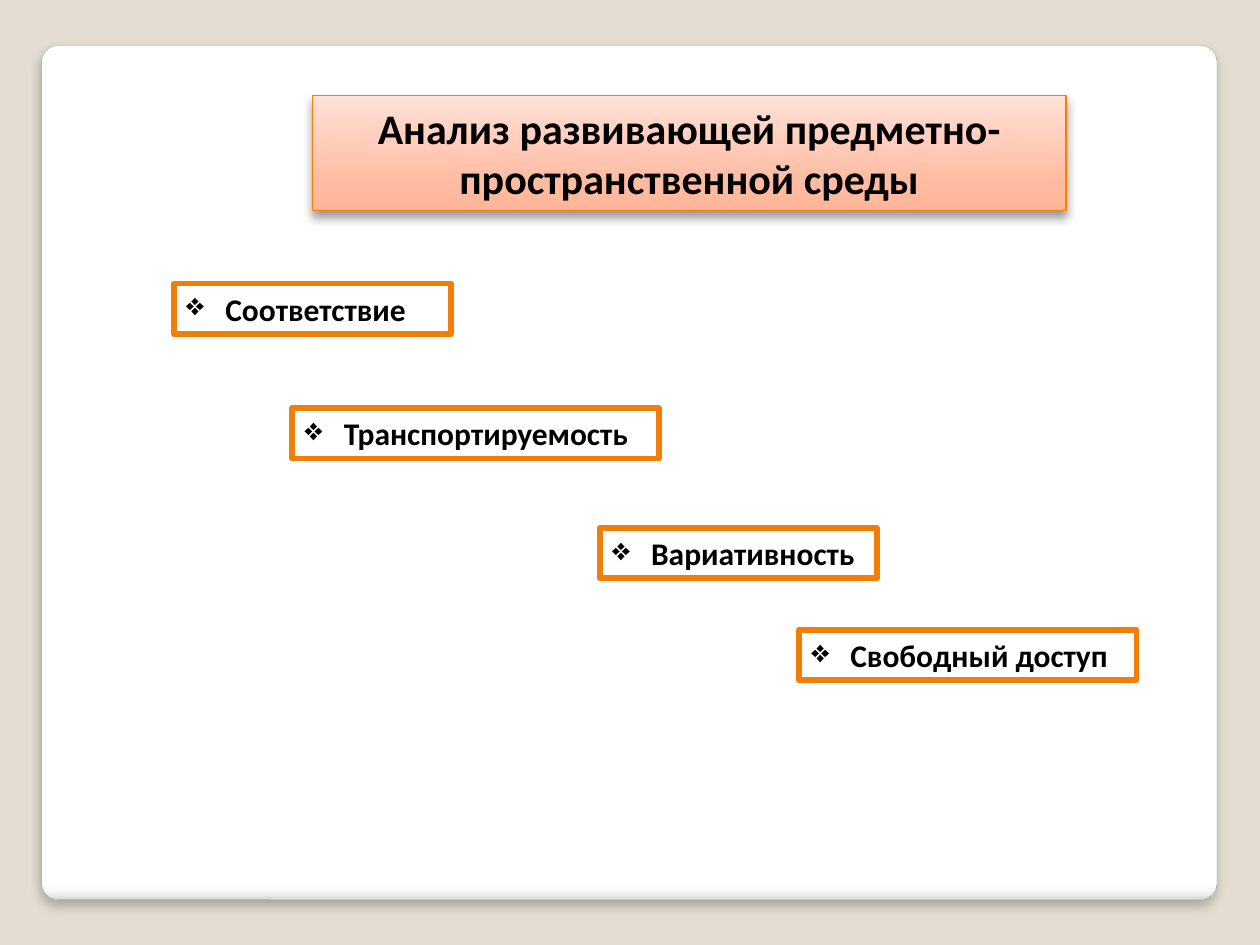
import pptx
import pptx.dml.color
import pptx.enum.dml
import pptx.enum.shapes
import pptx.enum.text
import pptx.oxml
import pptx.oxml.ns
import pptx.util
from pptx.util import Inches

NAMESPACE = pptx.oxml.ns.nsdecls("a")
RECTANGLE = pptx.enum.shapes.MSO_SHAPE.RECTANGLE
ROUNDED = pptx.enum.shapes.MSO_SHAPE.ROUNDED_RECTANGLE
ORANGE = "F07F09"
LABEL_HEIGHT = 0.4
LABELS = [
    ("Соответствие", 1.38, 2.25, 2.2),
    ("Транспортируемость", 2.32, 3.24, 2.91),
    ("Вариативность", 4.76, 4.19, 2.2),
    ("Свободный доступ", 6.34, 5, 2.68),
]


def color(hex_string):
    """Return the colour for a hex string."""
    return pptx.dml.color.RGBColor.from_string(hex_string)


def set_line(shape, hex_string, width):
    """Outline a shape with a solid line of the given width in points."""
    shape.line.color.rgb = color(hex_string)
    shape.line.width = pptx.util.Pt(width)


def set_gradient(shape, stops, angle):
    """Fill a shape with gradient stops at a counter-clockwise angle."""
    shape.fill.gradient()
    shape.fill.gradient_angle = angle
    stop_list = shape.element.spPr.find(".//" + pptx.oxml.ns.qn("a:gsLst"))
    for stop in list(stop_list):
        stop_list.remove(stop)
    for percent, hex_string in stops:
        stop_list.append(pptx.oxml.parse_xml(
            f'<a:gs {NAMESPACE} pos="{percent * 1000}"><a:srgbClr val="{hex_string}"/></a:gs>'))


def set_shadow(shape, opacity, blur, distance):
    """Give a shape a black shadow that falls straight down."""
    shape.shadow.inherit = False
    effects = shape.element.spPr.find(pptx.oxml.ns.qn("a:effectLst"))
    effects.append(pptx.oxml.parse_xml(
        f'<a:outerShdw {NAMESPACE} blurRad="{pptx.util.Pt(blur)}" dist="{pptx.util.Pt(distance)}" '
        f'dir="5400000" algn="t" rotWithShape="0"><a:srgbClr val="000000">'
        f'<a:alpha val="{opacity * 1000}"/></a:srgbClr></a:outerShdw>'))


def write_text(shape, text, size=18, align=pptx.enum.text.PP_ALIGN.LEFT, bullet=None, indent=0.31):
    """Write one bold black paragraph into a shape, with an optional bullet."""
    frame = shape.text_frame
    frame.word_wrap = True
    frame.auto_size = pptx.enum.text.MSO_AUTO_SIZE.SHAPE_TO_FIT_TEXT
    frame.vertical_anchor = pptx.enum.text.MSO_ANCHOR.TOP
    paragraph = frame.paragraphs[0]
    paragraph.alignment = align
    paragraph.line_spacing = 1.0
    paragraph.space_before = pptx.util.Pt(0)
    if bullet:
        properties = paragraph._p.get_or_add_pPr()
        properties.set("marL", str(Inches(indent)))
        properties.set("indent", str(-Inches(indent)))
        properties.append(pptx.oxml.parse_xml(f'<a:buChar {NAMESPACE} char="{bullet}"/>'))
    run = paragraph.add_run()
    run.text = text
    run.font.name = "Calibri"
    run.font.size = pptx.util.Pt(size)
    run.font.bold = True
    run.font.color.rgb = color("000000")


def add_card(slide, left, top, width, height):
    """Add the white rounded card that lies behind the content."""
    card = slide.shapes.add_shape(ROUNDED, Inches(left), Inches(top), Inches(width), Inches(height))
    card.adjustments[0] = 0.02
    set_gradient(card, [(0, "FFFFFF"), (98, "FFFFFF"), (99, "F7F7F7"), (100, "DADADA")], 270)
    set_line(card, "A4A4A4", 0.16)
    set_shadow(card, 25, 6, 4)
    return card


def place_title(slide, card, text, left, top, width, height):
    """Place the title banner in front of the card."""
    title = slide.shapes.title
    title.left, title.top = Inches(left), Inches(top)
    title.width, title.height = Inches(width), Inches(height)
    set_gradient(title, [(0, "FFB598"), (25, "FFBCA2"), (100, "FFE1D8")], 90)
    set_line(title, "F97F00", 0.75)
    set_shadow(title, 40, 5.2, 3)
    write_text(title, text, size=24, align=pptx.enum.text.PP_ALIGN.CENTER)
    card.element.addnext(title.element)


def add_label(slide, text, left, top, width, height):
    """Add one bulleted label in an orange frame."""
    label = slide.shapes.add_shape(RECTANGLE, Inches(left), Inches(top), Inches(width), Inches(height))
    label.shadow.inherit = False
    label.fill.solid()
    label.fill.fore_color.rgb = color("FFFFFF")
    set_line(label, ORANGE, 3.35)
    label.line._get_or_add_ln().append(pptx.oxml.parse_xml(f"<a:round {NAMESPACE}/>"))
    write_text(label, text, bullet="❖")


def main():
    """Build the slide and save it."""
    presentation = pptx.Presentation()
    presentation.slide_width, presentation.slide_height = Inches(10), Inches(7.5)
    slide = presentation.slides.add_slide(presentation.slide_layouts[5])
    slide.background.fill.solid()
    slide.background.fill.fore_color.rgb = color("E3DED1")
    card = add_card(slide, 0.33, 0.36, 9.33, 6.78)
    place_title(slide, card, "Анализ развивающей предметно-пространственной среды",
                2.48, 0.76, 5.98, 0.91)
    for text, left, top, width in LABELS:
        add_label(slide, text, left, top, width, LABEL_HEIGHT)
    presentation.save("out.pptx")


if __name__ == "__main__":
    main()
